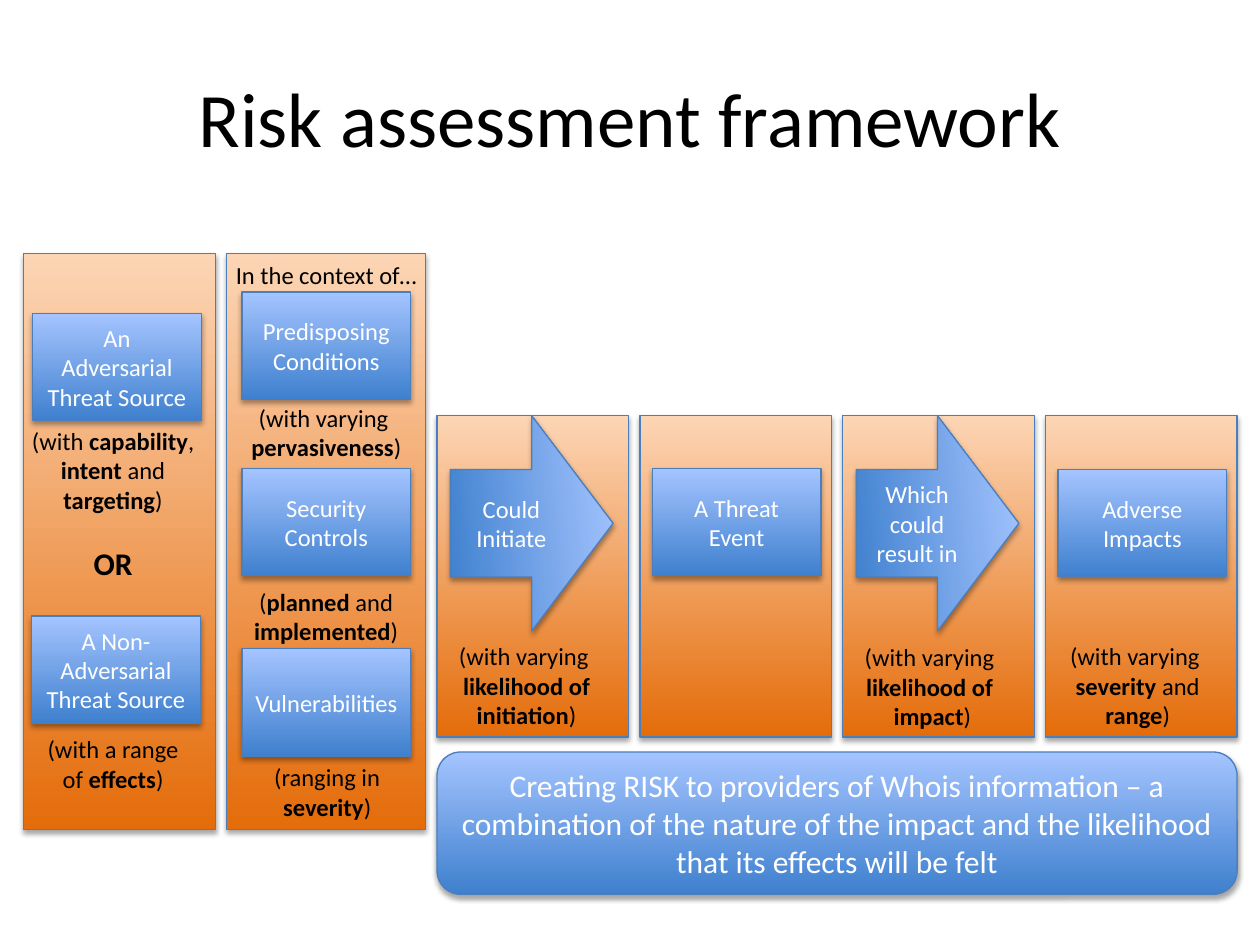
import pptx
import pptx.util
import pptx.dml.color
import pptx.enum.shapes
import pptx.enum.text
import pptx.oxml.ns
from lxml import etree

Cm, Pt = pptx.util.Cm, pptx.util.Pt
RGBColor = pptx.dml.color.RGBColor
Kind = pptx.enum.shapes.MSO_SHAPE
Fit = pptx.enum.text.MSO_AUTO_SIZE
Anchor = pptx.enum.text.MSO_ANCHOR
Align = pptx.enum.text.PP_ALIGN
qn = pptx.oxml.ns.qn

BLACK = RGBColor(0x00, 0x00, 0x00)
WHITE = RGBColor(0xFF, 0xFF, 0xFF)
EDGE = RGBColor(0x4B, 0x7E, 0xBC)
ORANGE = (RGBColor(0xE4, 0x6C, 0x0A), RGBColor(0xFC, 0xD5, 0xB5))
BLUE = (RGBColor(0x3F, 0x80, 0xCE), RGBColor(0xA4, 0xC4, 0xFF))


def write(par, text, size, color):
    """Fill a centred paragraph; *stars* mark bold, newlines break the line."""
    par.alignment = Align.CENTER
    for i, part in enumerate(text.split("*")):
        for j, line in enumerate(part.split("\n")):
            if j:
                par.add_line_break()
            if line:
                run = par.add_run()
                run.text = line
                run.font.name = "Calibri"
                run.font.size = Pt(size)
                run.font.bold = i % 2 == 1
                run.font.color.rgb = color
    for br in par._p.findall(qn("a:br")):
        etree.SubElement(br, qn("a:rPr"), sz=str(size * 100))


def block(kind, x, y, w, h, colors, text="", size=14, angle=90):
    """Add a shape with a gradient, a thin edge and a soft shadow."""
    shape = slide.shapes.add_shape(kind, Cm(x), Cm(y), Cm(w), Cm(h))
    shape.fill.gradient()
    shape.fill.gradient_angle = angle
    for stop, color in zip(shape.fill.gradient_stops, colors):
        stop.color.rgb = color
    shape.line.color.rgb = EDGE
    shape.line.width = Pt(0.75)
    shape.shadow.inherit = False
    glow = etree.SubElement(
        shape._element.spPr.find(qn("a:effectLst")), qn("a:outerShdw"),
        blurRad=str(Pt(3.1)), dist=str(Pt(1.8)), dir="5400000", rotWithShape="0")
    tint = etree.SubElement(glow, qn("a:srgbClr"), val="000000")
    etree.SubElement(tint, qn("a:alpha"), val="35000")
    if text:
        shape.text_frame.word_wrap = True
        shape.text_frame.vertical_anchor = Anchor.MIDDLE
        write(shape.text_frame.paragraphs[0], text, size, WHITE)


deck = pptx.Presentation()
deck.slide_width, deck.slide_height = Cm(25.4), Cm(19.05)
slide = deck.slides.add_slide(deck.slide_layouts[5])

title = slide.shapes.title
title.left, title.top, title.width, title.height = Cm(1.27), Cm(0.76), Cm(22.86), Cm(3.18)
title.text_frame.text = "Risk assessment framework"
font = title.text_frame.paragraphs[0].runs[0].font
font.name, font.size, font.color.rgb = "Calibri", Pt(44), BLACK

# Panels: two tall ones, then a row of four
steps = [8.81 + 4.09 * i for i in range(4)]
block(Kind.RECTANGLE, 0.48, 5.11, 3.86, 11.61, ORANGE)
block(Kind.RECTANGLE, 4.57, 5.11, 4.01, 11.61, ORANGE)
for x in steps:
    block(Kind.RECTANGLE, x, 8.38, 3.86, 6.48, ORANGE)

# Boxes and arrows
boxes = [
    (0.66, 6.32, "An Adversarial Threat Source"),
    (0.64, 12.42, "A Non-Adversarial Threat Source"),
    (4.88, 5.89, "Predisposing Conditions"),
    (4.88, 9.45, "Security Controls"),
    (4.88, 13.08, "Vulnerabilities"),
    (steps[1] + 0.25, 9.45, "A Threat Event"),
    (steps[3] + 0.25, 9.47, "Adverse Impacts"),
]
for x, y, text in boxes:
    block(Kind.RECTANGLE, x, y, 3.4, 2.16, BLUE, text)
for x, text in ((steps[0], "Could Initiate"), (steps[2], "Which could result in")):
    block(Kind.RIGHT_ARROW, x + 0.27, 8.38, 3.28, 4.34, BLUE, text, angle=6)
block(Kind.ROUNDED_RECTANGLE, steps[0], 15.16, 16.13, 2.87, BLUE,
      "Creating RISK to providers of Whois information – a combination of the "
      "nature of the impact and the likelihood that its effects will be felt", 18)

# Notes: left, top, width, height, wrap, text
notes = [
    (4.47, 5.11, 4.22, 0.86, False, "In the context of…"),
    (4.8, 8, 3.56, 1.45, False, "(with varying \n*pervasiveness*)"),
    (4.85, 11.71, 3.45, 1.45, False, "(*planned* and\n*implemented*)"),
    (5.26, 15.24, 2.67, 1.45, False, "(ranging in\n*severity*)"),
    (8.61, 12.8, 4.01, 2.06, True, "(with varying \n*likelihood of\ninitiation*)"),
    (16.79, 12.82, 4.01, 2.06, True, "(with varying \n*likelihood of \nimpact*)"),
    (20.93, 12.8, 4.01, 2.06, True, "(with varying \n*severity *and* range*)"),
    (0.25, 14.68, 4.06, 1.45, True, "(with a range\nof *effects*)"),
    (0.25, 8.46, 4.06, 3.43, True, "(with *capability*, *intent* and *targeting*)"),
]
for x, y, w, h, wrap, text in notes:
    frame = slide.shapes.add_textbox(Cm(x), Cm(y), Cm(w), Cm(h)).text_frame
    frame.word_wrap = wrap
    frame.auto_size = Fit.SHAPE_TO_FIT_TEXT
    write(frame.paragraphs[0], text, 14, BLACK)

# The last note also holds the choice between the two sources
choice = frame.add_paragraph()
choice.space_before = Pt(17)
write(choice, "*OR*", 18, BLACK)

deck.save("out.pptx")
